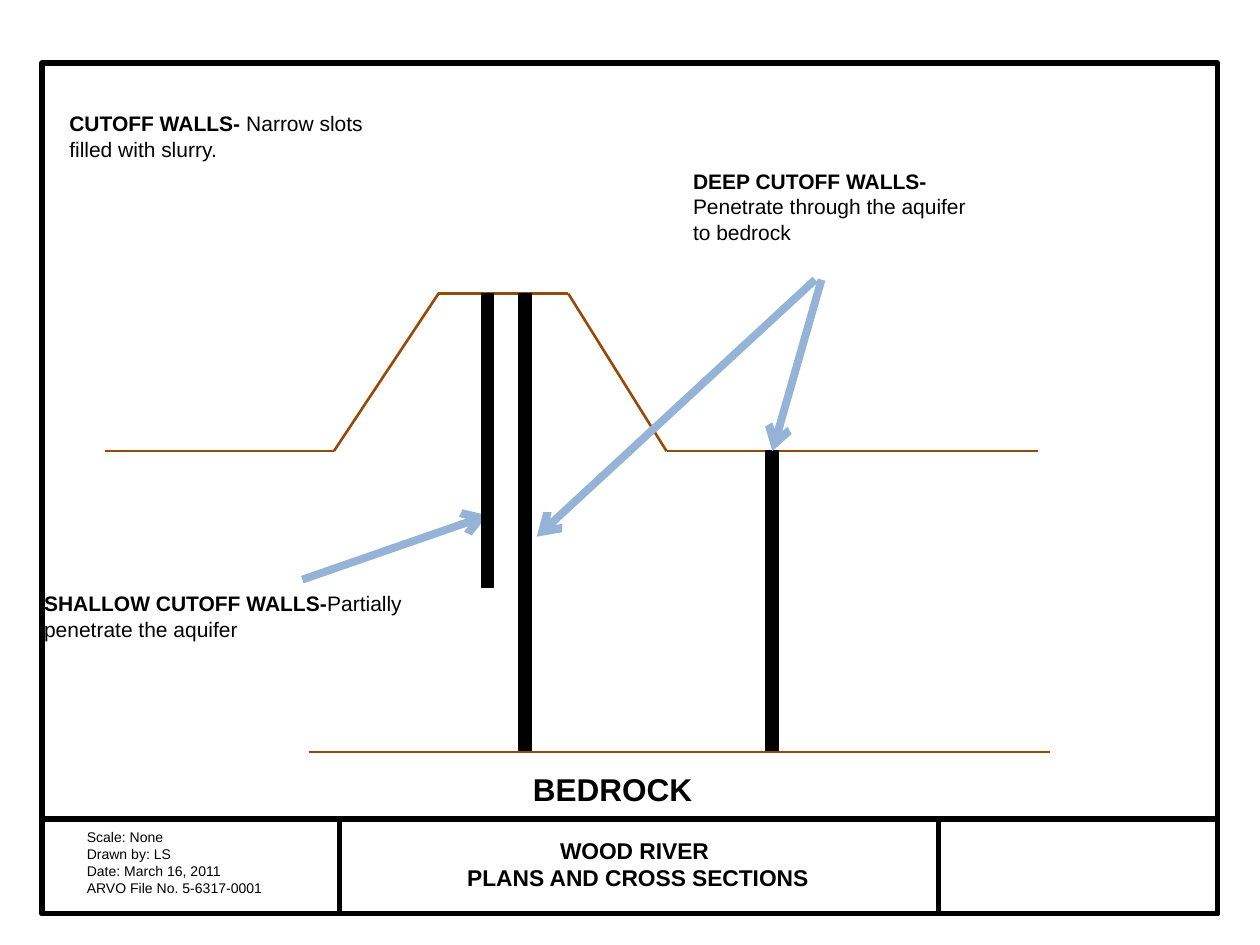
from itertools import pairwise
from lxml.etree import SubElement
from pptx import Presentation
from pptx.dml.color import RGBColor
from pptx.enum.shapes import MSO_CONNECTOR, MSO_SHAPE
from pptx.enum.text import MSO_AUTO_SIZE, PP_ALIGN
from pptx.oxml.ns import qn
from pptx.util import Inches, Pt

INK = {"black": "000000", "soil": "984807", "arrow": "95B3D7"}
COLS, ROWS = 100, 75


class Sheet:
    font = "Arial"

    def __init__(self, deck):
        self.wide, self.high = deck.slide_width, deck.slide_height
        self.slide = deck.slides.add_slide(deck.slide_layouts[6])
        self.shapes = self.slide.shapes

    def spot(self, col, row):
        return round(self.wide * col / COLS), round(self.high * row / ROWS)

    def ink(self, name):
        return RGBColor.from_string(INK[name])

    def rect(self, col, row, wide, high, line=3, fill=None):
        box = self.shapes.add_shape(
            MSO_SHAPE.RECTANGLE, *self.spot(col, row), *self.spot(wide, high))
        box.shadow.inherit = False
        if fill:
            box.fill.solid()
            box.fill.fore_color.rgb = self.ink(fill)
        else:
            box.fill.background()
        box.line.color.rgb = self.ink("black")
        box.line.width = Pt(line)

    def line(self, start, end, ink="soil", width=1.5, head=False):
        link = self.shapes.add_connector(
            MSO_CONNECTOR.STRAIGHT, *self.spot(*start), *self.spot(*end))
        link.line.color.rgb = self.ink(ink)
        link.line.width = Pt(width)
        if head:
            SubElement(link.line._get_or_add_ln(), qn("a:tailEnd"), type="arrow")
        SubElement(link._element.spPr, qn("a:effectLst"))

    def arrow(self, start, end):
        self.line(start, end, "arrow", 4.5, True)

    def text(self, col, row, wide, high, lines, size,
             bold=False, align=PP_ALIGN.LEFT, wrap=True):
        box = self.shapes.add_textbox(*self.spot(col, row), *self.spot(wide, high))
        frame = box.text_frame
        frame.word_wrap = wrap
        frame.auto_size = MSO_AUTO_SIZE.SHAPE_TO_FIT_TEXT
        if wrap:
            frame.margin_left = frame.margin_right = Inches(0.06)
            frame.margin_top = frame.margin_bottom = Inches(0.03)
        for spot, words in enumerate(lines):
            para = frame.add_paragraph() if spot else frame.paragraphs[0]
            para.text = words
            para.alignment = align
            para.font.name = self.font
            para.font.size = Pt(size)
            para.font.bold = bold
            para.font.color.rgb = self.ink("black")
        return frame

    def note(self, col, row, wide, high, term, rest):
        para = self.text(col, row, wide, high, [term], 12).paragraphs[0]
        para.runs[0].font.bold = True
        para.add_run().text = rest


def main():
    deck = Presentation()
    deck.slide_width, deck.slide_height = Inches(10), Inches(7.5)
    sheet = Sheet(deck)

    left, wide, base = 3.33, 93.33, 65
    crest, ground, rock = 23.3, 35.8, 59.7
    sheet.rect(left, 5, wide, 67.5)
    sheet.rect(left, base, wide, 7.5)
    for col in (26.95, 74.5):
        sheet.line((col, base), (col, 72.5), "black", 3)

    sheet.text(5.9, 65.3, 16.2, 6.4, [
        "Scale: None", "Drawn by: LS", "Date: March 16, 2011",
        "ARVO File No. 5-6317-0001"], 8, wrap=False)
    sheet.text(35.9, 65.9, 29.4, 5.4, ["WOOD RIVER ", "PLANS AND CROSS SECTIONS"],
               13, True, PP_ALIGN.CENTER, False)
    sheet.note(4.9, 8.5, 27.9, 4.7, "CUTOFF WALLS- ",
               "Narrow slots filled with slurry.")

    sheet.arrow((24, 46), (38.7, 40.9))
    levee = [(8.3, ground), (26.5, ground), (34.8, crest),
             (45.1, crest), (52.9, ground), (82.4, ground)]
    for start, end in pairwise(levee):
        sheet.line(start, end)
    for col, top, foot in ((41.2, crest, rock), (60.8, ground, rock),
                           (38.2, crest, 46.6)):
        sheet.rect(col, top, 1, foot - top, 0.75, "black")
    sheet.line((24.5, rock), (83.3, rock))
    sheet.text(41.7, 60.8, 22.1, 3.7, ["BEDROCK"], 18, True)

    sheet.note(54.4, 13.1, 24.5, 6.7, "DEEP CUTOFF WALLS-",
               "Penetrate through the aquifer to bedrock")
    sheet.arrow((64.7, 22.2), (42.6, 42.6))
    sheet.arrow((65.2, 22.2), (61.3, ground))
    sheet.note(2.9, 46.6, 29.9, 4.7, "SHALLOW CUTOFF WALLS-",
               "Partially penetrate the aquifer")
    deck.save("out.pptx")


if __name__ == "__main__":
    main()
